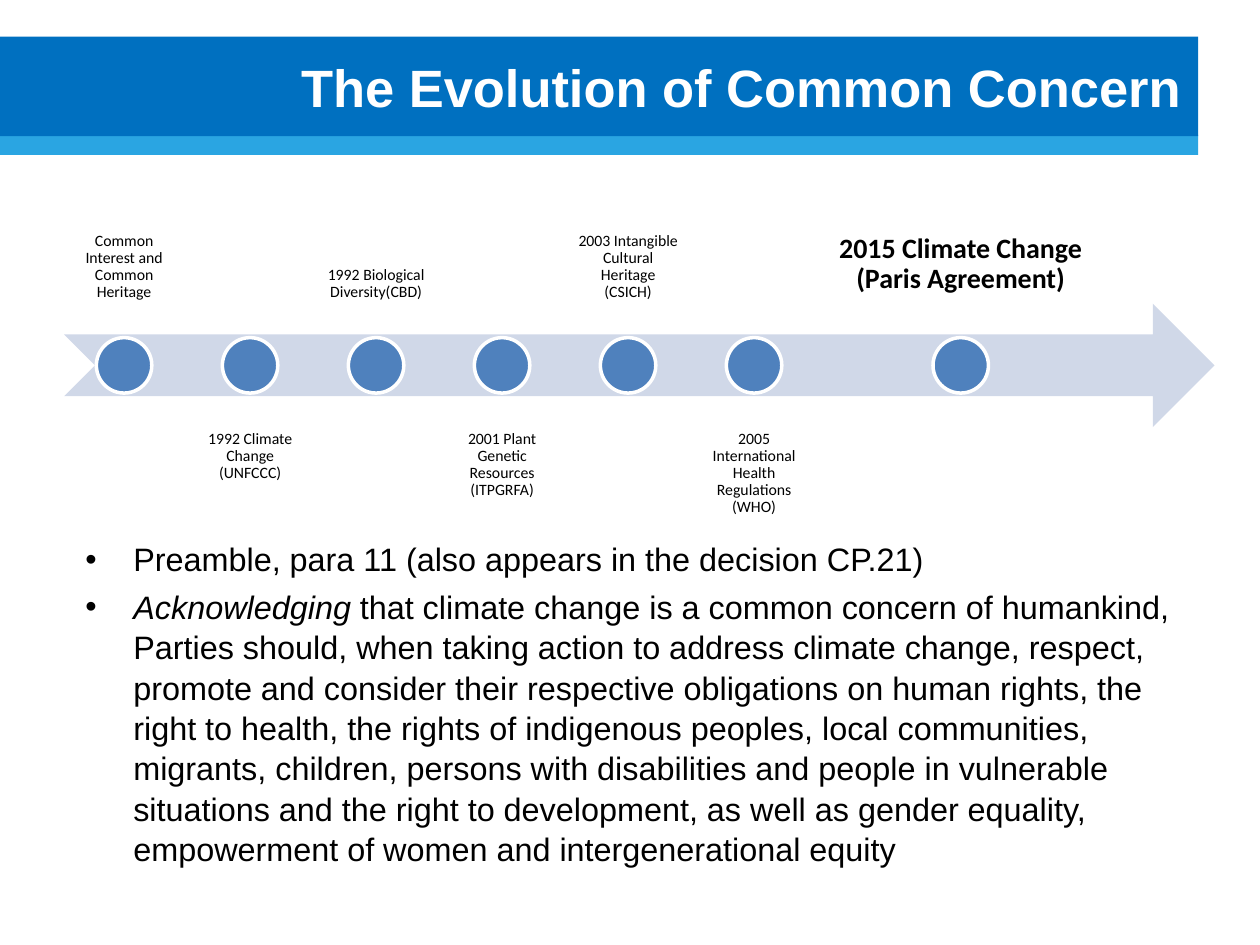
"""Build a slide with a timeline of the evolution of common concern."""
import pptx
import pptx.util
import pptx.dml.color
import pptx.enum.shapes
import pptx.enum.text
import pptx.oxml.ns
from lxml import etree

Inches, Pt = pptx.util.Inches, pptx.util.Pt
RGBColor = pptx.dml.color.RGBColor
SHAPE = pptx.enum.shapes.MSO_SHAPE
ALIGN = pptx.enum.text.PP_ALIGN
ANCHOR = pptx.enum.text.MSO_ANCHOR

BLUE = RGBColor(0x00, 0x70, 0xC0)
SKY = RGBColor(0x2A, 0xA5, 0xE2)
PALE = RGBColor(0xD0, 0xD8, 0xE8)
DOT_BLUE = RGBColor(0x4F, 0x81, 0xBD)
WHITE = RGBColor(0xFF, 0xFF, 0xFF)
BLACK = RGBColor(0x00, 0x00, 0x00)

TITLE = "The Evolution of Common Concern"
EVENTS = [
    "Common Interest and Common Heritage",
    "1992 Climate Change (UNFCCC)",
    "1992 Biological Diversity(CBD)",
    "2001 Plant Genetic Resources (ITPGRFA)",
    "2003 Intangible Cultural Heritage (CSICH)",
    "2005 International Health Regulations (WHO)",
    "2015 Climate Change (Paris Agreement)",
]
BULLETS = [
    [("Preamble, para 11 (also appears in the decision CP.21)", False)],
    [("Acknowledging ", True),
     ("that climate change is a common concern of humankind, Parties should, "
      "when taking action to address climate change, respect, promote and "
      "consider their respective obligations on human rights, the right to "
      "health, the rights of indigenous peoples, local communities, migrants, "
      "children, persons with disabilities and people in vulnerable situations "
      "and the right to development, as well as gender equality, empowerment "
      "of women and intergenerational equity", False)],
]

LEFT, STEP, LABEL_W, LABEL_H = 0.51, 1.0, 0.95, 1.78
LAST_W, DOT = 2.23, 0.44
ABOVE, BELOW, DOT_TOP = 0.68, 3.35, 2.68


def add_text(p, text, size=18.5, font="Arial", color=BLACK, bold=False,
             italic=False, align=ALIGN.LEFT):
    p.alignment = align
    r = p.add_run()
    r.text = text
    r.font.size, r.font.name = Pt(size), font
    r.font.bold, r.font.italic = bold, italic
    r.font.color.rgb = color


def add_shape(s, kind, box, fill, line=None):
    sp = s.shapes.add_shape(kind, *map(Inches, box))
    sp.shadow.inherit = False
    sp.fill.solid()
    sp.fill.fore_color.rgb = fill
    if line is None:
        sp.line.fill.background()
    else:
        sp.line.color.rgb = line
        sp.line.width = Pt(2)


def add_box(s, box, inset=None, anchor=ANCHOR.TOP):
    tf = s.shapes.add_textbox(*map(Inches, box)).text_frame
    tf.word_wrap = True
    tf.vertical_anchor = anchor
    if inset is not None:
        tf.margin_left = tf.margin_right = Inches(inset)
        tf.margin_top = tf.margin_bottom = Inches(inset)
    return tf


def add_timeline(s):
    add_shape(s, SHAPE.NOTCHED_RIGHT_ARROW, (LEFT, 2.41, 9.13, 0.98), PALE)
    for i, event in enumerate(EVENTS):
        last = i == len(EVENTS) - 1
        x, w = LEFT + i * STEP, LAST_W if last else LABEL_W
        top, anchor = (BELOW, ANCHOR.TOP) if i % 2 else (ABOVE, ANCHOR.BOTTOM)
        tf = add_box(s, (x, top, w, LABEL_H), 0.12 if last else 0.07, anchor)
        p = tf.paragraphs[0]
        p.line_spacing = 0.9
        add_text(p, event, size=16 if last else 9, font="Calibri", bold=last,
                 align=ALIGN.CENTER)
        add_shape(s, SHAPE.OVAL, (x + (w - DOT) / 2, DOT_TOP, DOT, DOT),
                  DOT_BLUE, WHITE)


def add_title(s):
    sp = s.shapes.title
    s.shapes.element.append(sp.element)
    sp.left, sp.top, sp.width, sp.height = map(Inches, (LEFT, 0.3, 8.97, 0.77))
    tf = sp.text_frame
    tf.vertical_anchor = ANCHOR.MIDDLE
    add_text(tf.paragraphs[0], TITLE, size=30, color=WHITE, bold=True,
             align=ALIGN.RIGHT)


def add_bullets(s):
    tf = add_box(s, (0.58, 4.22, 8.82, 2.53))
    for i, runs in enumerate(BULLETS):
        p = tf.add_paragraph() if i else tf.paragraphs[0]
        p.line_spacing = 1.04
        if i:
            p.space_before = Pt(4)
        pPr = p._p.get_or_add_pPr()
        pPr.set("marL", str(Inches(0.38)))
        pPr.set("indent", str(-Inches(0.38)))
        qn = pptx.oxml.ns.qn
        etree.SubElement(pPr, qn("a:buFont"), typeface="Arial")
        etree.SubElement(pPr, qn("a:buChar"), char="•")
        for text, italic in runs:
            add_text(p, text, italic=italic)


def main():
    prs = pptx.Presentation()
    prs.slide_width, prs.slide_height = Inches(10), Inches(7.5)
    s = prs.slides.add_slide(prs.slide_layouts[5])
    add_shape(s, SHAPE.RECTANGLE, (0, 1.07, 9.51, 0.16), SKY)
    add_shape(s, SHAPE.RECTANGLE, (0, 0.29, 9.51, 0.79), BLUE)
    add_timeline(s)
    add_title(s)
    add_bullets(s)
    prs.save("out.pptx")


if __name__ == "__main__":
    main()
